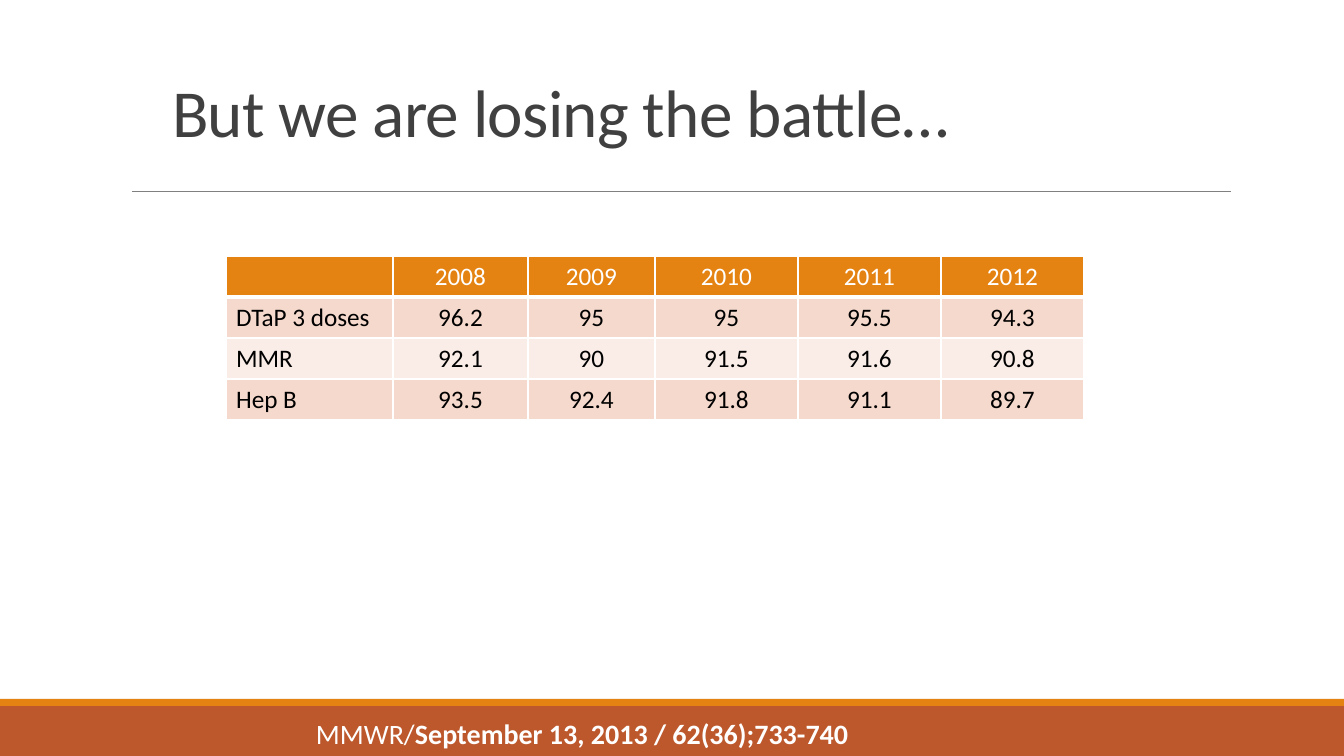
"""Build a slide with a table of vaccine coverage by year."""
from lxml import etree
from pptx import Presentation
from pptx import util as u
from pptx.dml.color import RGBColor
from pptx.enum import shapes, text
from pptx.oxml import ns

TITLE = "But we are losing the battle…"
ROWS = [
    ("", "2008", "2009", "2010", "2011", "2012"),
    ("DTaP 3 doses", "96.2", "95", "95", "95.5", "94.3"),
    ("MMR", "92.1", "90", "91.5", "91.6", "90.8"),
    ("Hep B", "93.5", "92.4", "91.8", "91.1", "89.7"),
]
SOURCE = [("MMWR/", False), ("September 13, 2013 / 62(36);733-740", True)]
BARS = [("rust", 706, 50), ("orange", 699, 7)]
COLS = [167, 135, 127, 143, 143, 143]
ROW_H = 41
COLOURS = {
    "rust": "BD582C", "orange": "E48312", "rule": "808080", "title": "404040",
    "white": "FFFFFF", "black": "000000", "dark": "F5D9CC", "pale": "FAEDE7",
}
FONT = "Calibri"
SCALE = 914400 / 100.8


def px(*sizes):
    return [round(size * SCALE) for size in sizes]


def rgb(name):
    return RGBColor.from_string(COLOURS[name])


def style(para, size, colour):
    para.font.name, para.font.size = FONT, u.Pt(size)
    para.font.color.rgb = rgb(colour)


def paint(fill, colour):
    fill.solid()
    fill.fore_color.rgb = rgb(colour)


def edge(cell, sides):
    props = cell._tc.get_or_add_tcPr()
    for spot, (side, width) in enumerate(sides.items()):
        line = etree.Element(ns.qn("a:ln" + side), w=str(u.Pt(width)))
        solid = etree.SubElement(line, ns.qn("a:solidFill"))
        etree.SubElement(solid, ns.qn("a:srgbClr"), val=COLOURS["white"])
        props.insert(spot, line)


def add_bars(slide):
    for colour, top, high in BARS:
        bar = slide.shapes.add_shape(
            shapes.MSO_SHAPE.RECTANGLE, *px(0, top, 1344, high))
        bar.shadow.inherit = False
        paint(bar.fill, colour)
        bar.line.fill.background()


def add_rule(slide):
    rule = slide.shapes.add_connector(
        shapes.MSO_CONNECTOR.STRAIGHT, *px(132, 191, 1231, 191))
    rule.line.color.rgb = rgb("rule")
    rule.line.width = u.Pt(0.5)
    etree.SubElement(rule._element.spPr, ns.qn("a:effectLst"))


def add_title(slide):
    title = slide.shapes.title
    title.left, title.top, title.width, title.height = px(162, 30, 964, 126)
    frame = title.text_frame
    frame.text = TITLE
    frame.word_wrap = True
    frame.vertical_anchor = text.MSO_ANCHOR.BOTTOM
    para = frame.paragraphs[0]
    para.alignment = text.PP_ALIGN.LEFT
    para.line_spacing = 0.85
    style(para, 48, "title")
    para.runs[0].font._element.set("spc", "-50")


def add_grid(slide):
    table = slide.shapes.add_table(
        len(ROWS), len(COLS),
        *px(226, 256, sum(COLS), ROW_H * len(ROWS))).table
    for col, width in zip(table.columns, px(*COLS)):
        col.width = width
    for r, row in enumerate(ROWS):
        table.rows[r].height = px(ROW_H)[0]
        back = "orange" if r == 0 else ("pale", "dark")[r % 2]
        for c, value in enumerate(row):
            cell = table.cell(r, c)
            cell.text = value
            paint(cell.fill, back)
            edge(cell, {"L": 1, "R": 1, "T": 3 if r == 1 else 1,
                        "B": 3 if r == 0 else 1})
            para = cell.text_frame.paragraphs[0]
            style(para, 18, "black" if r else "white")
            para.font.bold = False
            if c:
                para.alignment = text.PP_ALIGN.CENTER


def add_source(slide):
    frame = slide.shapes.add_textbox(*px(306, 712, 612, 44)).text_frame
    frame.word_wrap = True
    para = frame.paragraphs[0]
    style(para, 20, "white")
    for words, bold in SOURCE:
        run = para.add_run()
        run.text, run.font.bold = words, bold


def main():
    deck = Presentation()
    deck.slide_width, deck.slide_height = px(1344, 756)
    slide = deck.slides.add_slide(deck.slide_layouts[5])
    for add in (add_bars, add_rule, add_title, add_grid, add_source):
        add(slide)
    deck.save("out.pptx")


if __name__ == "__main__":
    main()
